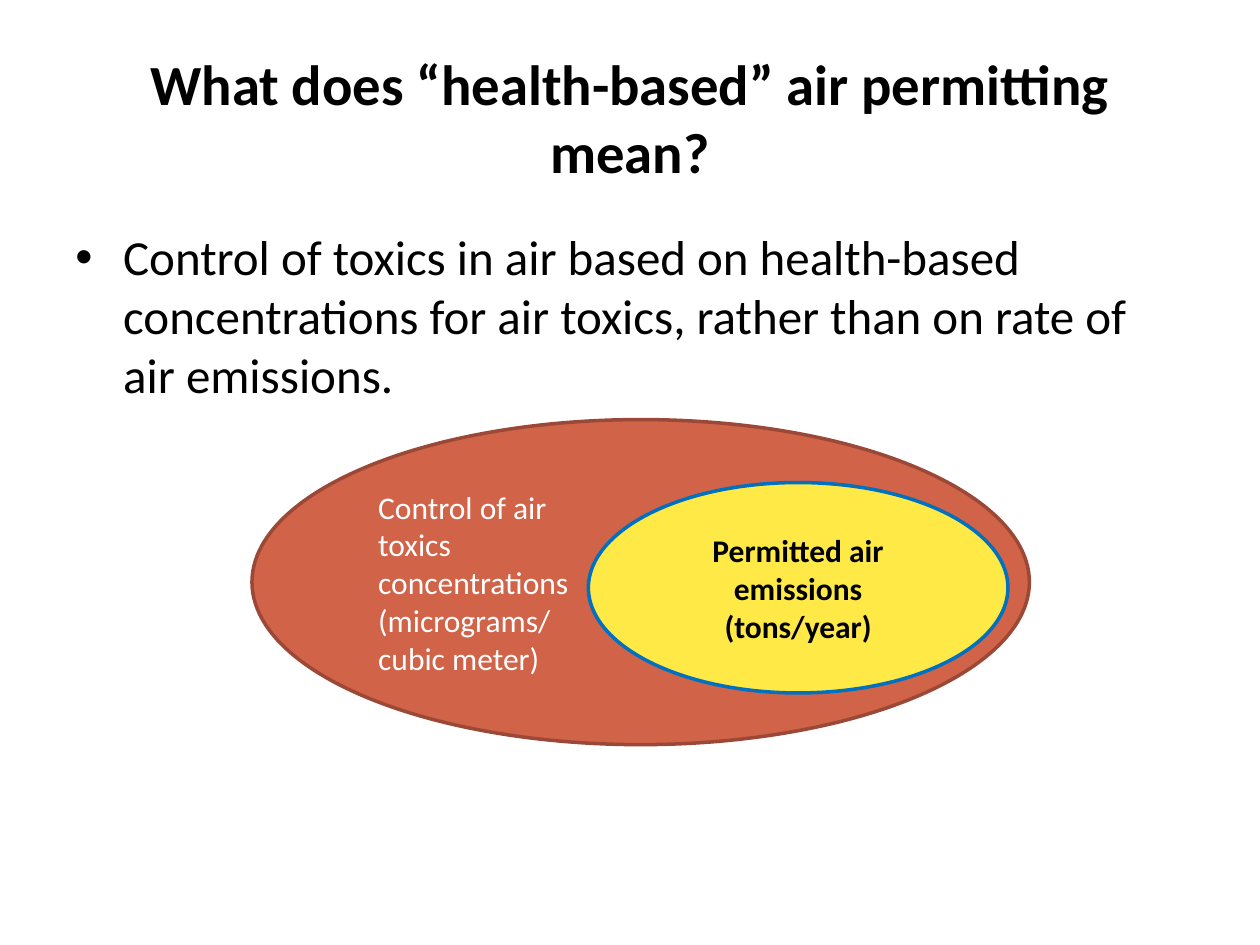
from lxml import etree
from pptx import Presentation
from pptx.dml.color import RGBColor
from pptx.enum.shapes import MSO_SHAPE
from pptx.enum.text import MSO_ANCHOR, PP_ALIGN
from pptx.oxml.ns import qn
from pptx.util import Inches, Pt

OVAL = MSO_SHAPE.OVAL
TOP, MIDDLE = MSO_ANCHOR.TOP, MSO_ANCHOR.MIDDLE
LEFT, CENTER = PP_ALIGN.LEFT, PP_ALIGN.CENTER

THEME = {
    "font": "Calibri",
    "black": RGBColor.from_string("000000"),
    "white": RGBColor.from_string("FFFFFF"),
    "red": RGBColor.from_string("D16349"),
    "dark_red": RGBColor.from_string("9B4936"),
    "yellow": RGBColor.from_string("FFE947"),
    "blue": RGBColor.from_string("0070C0"),
    "title": Pt(32.4),
    "body": Pt(28),
    "label": Pt(18),
    "outline": Pt(2),
}


def write(sp, lines, size, color, bold=False, align=LEFT, anchor=MIDDLE):
    tf = sp.text_frame
    tf.word_wrap = True
    tf.vertical_anchor = anchor
    for i, line in enumerate(lines):
        p = tf.add_paragraph() if i else tf.paragraphs[0]
        p.alignment = align
        r = p.add_run()
        r.text = line
        font = {"name": THEME["font"], "size": THEME[size], "bold": bold}
        for name, value in font.items():
            setattr(r.font, name, value)
        r.font.color.rgb = THEME[color]


prs = Presentation()
prs.slide_width, prs.slide_height = Inches(10), Inches(7.5)
s = prs.slides.add_slide(prs.slide_layouts[6])

title = s.shapes.add_textbox(Inches(0.5), Inches(0.3), Inches(9), Inches(1.25))
write(title, ["What does “health-based” air permitting mean?"],
      "title", "black", bold=True, align=CENTER)

body = s.shapes.add_textbox(Inches(0.5), Inches(1.75), Inches(9), Inches(4.95))
write(body, ["Control of toxics in air based on health-based concentrations "
             "for air toxics, rather than on rate of air emissions."],
      "body", "black", anchor=TOP)
p = body.text_frame.paragraphs[0]
p.space_before = Pt(5.6)
pPr = p._p.get_or_add_pPr()
pPr.set("marL", str(Inches(0.38)))
pPr.set("indent", str(Inches(-0.38)))
etree.SubElement(pPr, qn("a:buFont")).set("typeface", "Arial")
etree.SubElement(pPr, qn("a:buChar")).set("char", "•")

ovals = [
    ((2, 3.33, 6.17, 2.58), "red", "dark_red",
     ["Control of air", "toxics", "concentrations", "(micrograms/", "cubic meter)"],
     {"color": "white"}),
    ((4.67, 3.83, 3.33, 1.67), "yellow", "blue",
     ["Permitted air emissions (tons/year)"],
     {"color": "black", "bold": True, "align": CENTER}),
]
for box, fill, line, lines, style in ovals:
    sp = s.shapes.add_shape(OVAL, *[Inches(v) for v in box])
    sp.shadow.inherit = False
    sp.fill.solid()
    sp.fill.fore_color.rgb = THEME[fill]
    sp.line.color.rgb = THEME[line]
    sp.line.width = THEME["outline"]
    write(sp, lines, "label", **style)

prs.save("out.pptx")
